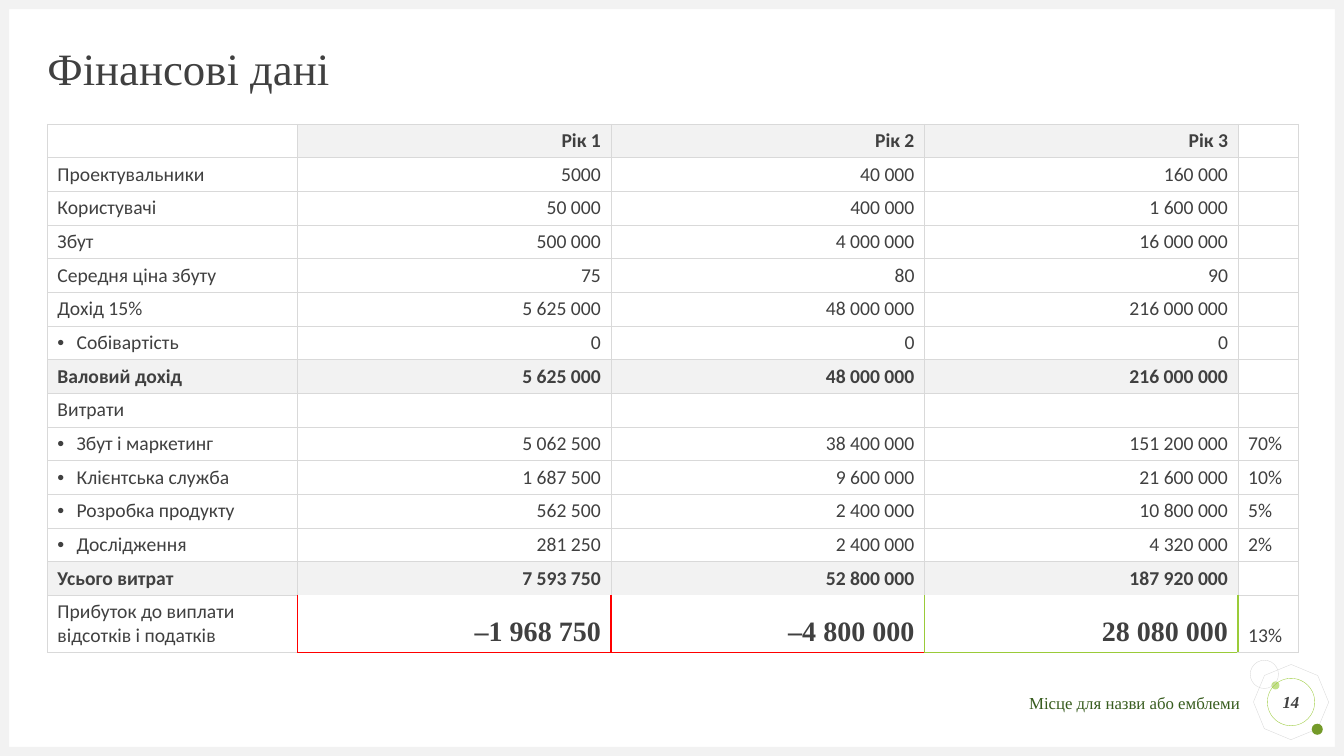
import pptx
import pptx.util
import pptx.dml.color
import pptx.enum.shapes
import pptx.enum.text
import pptx.oxml
import pptx.oxml.ns

Inches, Pt = pptx.util.Inches, pptx.util.Pt
KIND = pptx.enum.shapes.MSO_SHAPE
ALIGN = pptx.enum.text.PP_ALIGN
ANCHOR = pptx.enum.text.MSO_ANCHOR

# Content
TITLE = "Фінансові дані"
FOOTER = "Місце для назви або емблеми"
PAGE = "14"
ROWS = [
    ("", "Рік 1", "Рік 2", "Рік 3", ""),
    ("Проектувальники", "5000", "40 000", "160 000", ""),
    ("Користувачі", "50 000", "400 000", "1 600 000", ""),
    ("Збут", "500 000", "4 000 000", "16 000 000", ""),
    ("Середня ціна збуту", "75", "80", "90", ""),
    ("Дохід 15%", "5 625 000", "48 000 000", "216 000 000", ""),
    ("Собівартість", "0", "0", "0", ""),
    ("Валовий дохід", "5 625 000", "48 000 000", "216 000 000", ""),
    ("Витрати", "", "", "", ""),
    ("Збут і маркетинг", "5 062 500", "38 400 000", "151 200 000", "70%"),
    ("Клієнтська служба", "1 687 500", "9 600 000", "21 600 000", "10%"),
    ("Розробка продукту", "562 500", "2 400 000", "10 800 000", "5%"),
    ("Дослідження", "281 250", "2 400 000", "4 320 000", "2%"),
    ("Усього витрат", "7 593 750", "52 800 000", "187 920 000", ""),
    ("Прибуток до виплати відсотків і податків",
     "–1 968 750", "–4 800 000", "28 080 000", "13%"),
]
BOLD = {0, 7, 13}
LISTED = {6, 9, 10, 11, 12}
COLS = [2.48, 3.11, 3.11, 3.11, 0.6]
LAST = len(ROWS) - 1
COLORS = {
    "white": "FFFFFF", "pale": "F2F2F2", "rule": "D9D9D9", "text": "404040",
    "loss": "FF0000", "gain": "9ACB39", "light": "C2E088", "deep": "749A29",
    "foot": "375C1E",
}
SANS, SERIF = "Calibri", "Times New Roman"
WIDE, HIGH, EDGE = 13.33, 7.5, 0.09

# Kind, left, top, width, height, fill, line, turn
SHAPES = [
    (KIND.OCTAGON, 12.46, 6.62, 0.69, 0.69, None, "rule", 22.7),
    (KIND.OVAL, 12.61, 6.76, 0.08, 0.08, "light", None, 0),
    (KIND.OVAL, 13.01, 7.18, 0.11, 0.11, "deep", None, 0),
    (KIND.OVAL, 12.4, 6.55, 0.28, 0.28, None, "rule", 0),
    (KIND.RECTANGLE, 0, HIGH - EDGE, WIDE, EDGE, "pale", None, 0),
    (KIND.RECTANGLE, 0, 0, WIDE, EDGE, "pale", None, 0),
    (KIND.RECTANGLE, 0, 0, EDGE, HIGH, "pale", None, 0),
    (KIND.RECTANGLE, WIDE - EDGE, 0, EDGE, HIGH, "pale", None, 0),
]

deck = pptx.Presentation()
deck.slide_width, deck.slide_height = Inches(WIDE), Inches(HIGH)
slide = deck.slides.add_slide(deck.slide_layouts[6])


def color(name):
    return pptx.dml.color.RGBColor.from_string(COLORS[name])


def node(tag, **attrs):
    item = pptx.oxml.parse_xml(f"<a:{tag} {pptx.oxml.ns.nsdecls('a')}/>")
    for key, value in attrs.items():
        item.set(key, str(value))
    return item


def style(para, size, face, tint="text", bold=False, italic=False):
    for run in para.runs:
        font = run.font
        font.size, font.name = Pt(size), face
        font.bold, font.italic = bold, italic
        font.color.rgb = color(tint)


def draw(kind, left, top, width, height, fill, line, turn):
    shape = slide.shapes.add_shape(
        kind, Inches(left), Inches(top), Inches(width), Inches(height))
    shape.shadow.inherit = False
    shape.rotation = turn
    if fill:
        shape.fill.solid()
        shape.fill.fore_color.rgb = color(fill)
    else:
        shape.fill.background()
    if line:
        shape.line.color.rgb = color(line)
        shape.line.width = Pt(0.25)
    else:
        shape.line.fill.background()
    return shape


def write(shape, text, size, align, anchor, tint="text", **looks):
    frame = shape.text_frame
    frame.text = text
    frame.word_wrap = True
    frame.margin_left = frame.margin_right = 0
    frame.margin_top = frame.margin_bottom = 0
    frame.vertical_anchor = anchor
    para = frame.paragraphs[0]
    para.alignment = align
    style(para, size, SERIF, tint, **looks)
    return para


def box(left, top, width, height):
    return slide.shapes.add_textbox(
        Inches(left), Inches(top), Inches(width), Inches(height))


def edges(row, col):
    """Border colour of each side; None means no line."""
    sides = dict.fromkeys("LRTB", "rule")
    inner = 1 <= col <= 3
    if row == LAST - 1 and inner:
        sides["B"] = None
    if row == LAST:
        tint = "gain" if col >= 3 else "loss"
        if inner:
            sides.update(L=tint, T=None, B=tint)
        if col == 4:
            sides["L"] = "gain"
        else:
            sides["R"] = "gain" if col >= 2 else "loss"
    return sides


def border(cell, sides):
    props = cell._tc.get_or_add_tcPr()
    for spot, (side, tint) in enumerate(sides.items()):
        width = Pt(0.25 if tint == "rule" else 1)
        line = node(f"ln{side}", w=width)
        if tint:
            fill = node("solidFill")
            fill.append(node("srgbClr", val=COLORS[tint]))
        else:
            fill = node("noFill")
        line.append(fill)
        props.insert(spot, line)


def bullet(para):
    props = para._p.get_or_add_pPr()
    props.set("marL", str(Inches(0.19)))
    props.set("indent", str(-Inches(0.19)))
    props.append(node("buFont", typeface="Arial"))
    props.append(node("buChar", char="•"))


# Frame and ornament
for parts in SHAPES:
    draw(*parts)

# Title
head = write(box(0.47, 0.47, 12.4, 0.47), TITLE, 32, ALIGN.LEFT, ANCHOR.MIDDLE)
head.line_spacing = 0.9

# Table
table = slide.shapes.add_table(
    len(ROWS), len(COLS), Inches(0.47), Inches(1.23),
    Inches(sum(COLS)), Inches(5.24)).table
table.first_row = table.horz_banding = False
for col, width in enumerate(COLS):
    table.columns[col].width = Inches(width)
for row, texts in enumerate(ROWS):
    table.rows[row].height = Inches(0.42 if row == LAST else 0.33)
    for col, text in enumerate(texts):
        cell = table.cell(row, col)
        shaded = row in BOLD and col < 4 and (row or col)
        cell.fill.solid()
        cell.fill.fore_color.rgb = color("pale" if shaded else "white")
        cell.vertical_anchor = ANCHOR.BOTTOM
        border(cell, edges(row, col))
        cell.text_frame.text = text
        para = cell.text_frame.paragraphs[0]
        number = 1 <= col <= 3
        para.alignment = ALIGN.RIGHT if number else ALIGN.LEFT
        if row in LISTED and col == 0:
            bullet(para)
        total = row == LAST and number
        style(para, 20 if total else 14, SERIF if total else SANS,
              bold=row in BOLD or total)
        if not text:
            para._p.append(node("endParaRPr", sz=1400))

# Page number and footer
badge = draw(KIND.OVAL, 12.57, 6.73, 0.47, 0.47, None, "gain", 0)
write(badge, PAGE, 12, ALIGN.CENTER, ANCHOR.MIDDLE, bold=True, italic=True)
write(box(9.55, 6.87, 2.75, 0.2), FOOTER, 12, ALIGN.RIGHT, ANCHOR.TOP, "foot")

deck.save("out.pptx")
